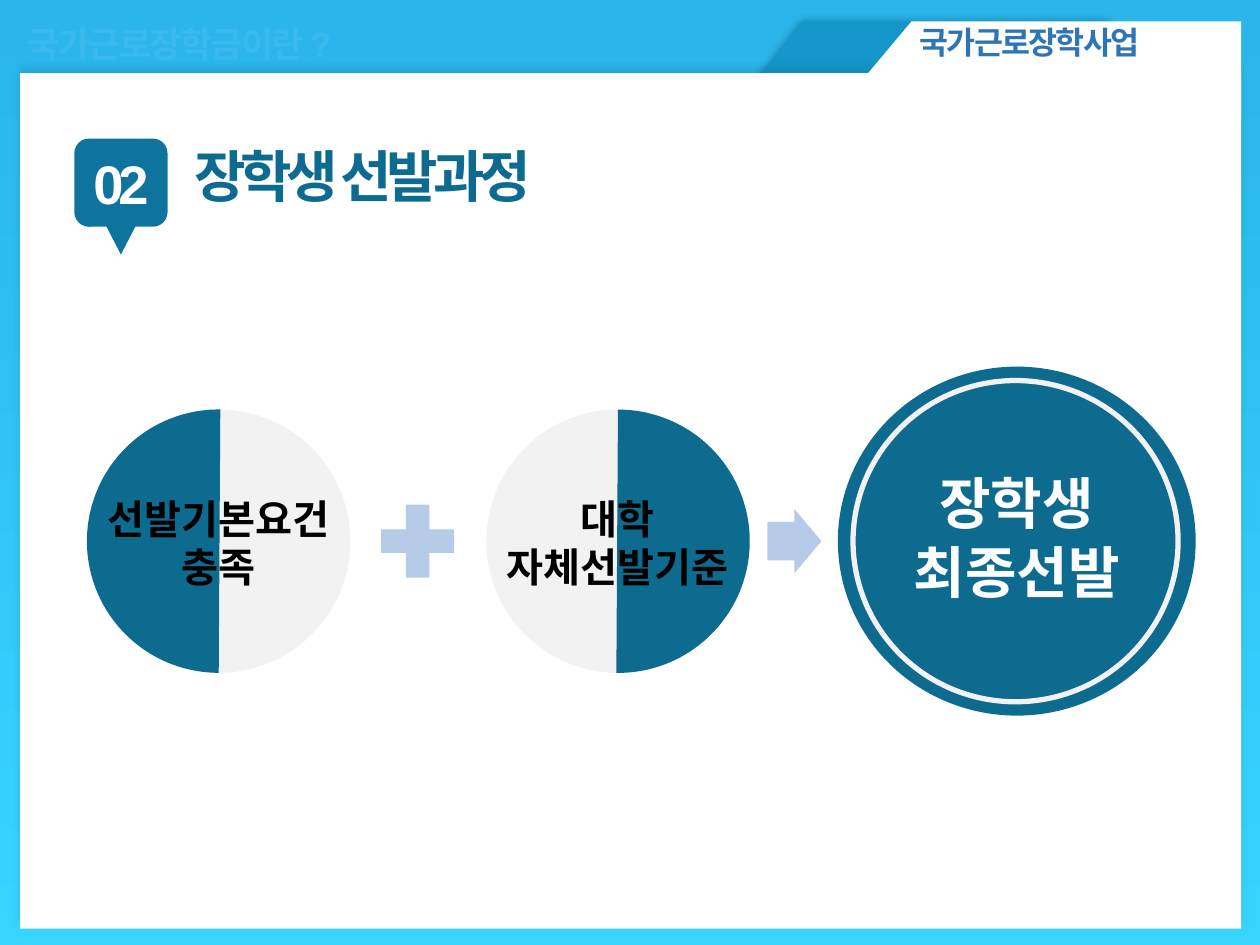
from lxml.etree import SubElement
from pptx import Presentation
from pptx.dml.color import RGBColor
from pptx.enum.shapes import MSO_SHAPE
from pptx.enum.text import MSO_ANCHOR, MSO_AUTO_SIZE, PP_ALIGN
from pptx.oxml.ns import qn
from pptx.util import Inches, Pt

TEAL, BADGE, PALE, SIGN = "0E6B90", "0F749D", "F2F2F2", "B5CBE7"
WHITE, SHADE = "FFFFFF", "0A4C66"


def color(value):
    return RGBColor.from_string(value)


def add_shape(page, kind, box, fill=None, line=None, width=0):
    shape = page.shapes.add_shape(kind, *map(Inches, box))
    shape.shadow.inherit = False
    if fill:
        shape.fill.solid()
        shape.fill.fore_color.rgb = color(fill)
    else:
        shape.fill.background()
    if line:
        shape.line.color.rgb = color(line)
        shape.line.width = Pt(width)
    else:
        shape.line.fill.background()
    return shape


def add_shadow(shape, alpha, blur, distance=0, angle=0):
    effects = shape.element.spPr.find(qn("a:effectLst"))
    shadow = SubElement(effects, qn("a:outerShdw"), blurRad=str(Pt(blur)),
                        dist=str(Pt(distance)), dir=str(angle * 60000),
                        algn="ctr", rotWithShape="0")
    tint = SubElement(shadow, qn("a:srgbClr"), val=SHADE)
    SubElement(tint, qn("a:alpha"), val=str(alpha * 1000))


def write(shape, text, size, ink, align=PP_ALIGN.CENTER, tracking=0):
    """Set bold Arial text; tracking is letter spacing in points."""
    frame = shape.text_frame
    frame.word_wrap = True
    frame.text = text
    for para in frame.paragraphs:
        para.alignment = align
        for span in para.runs:
            span.font.name = "Arial"
            span.font.size = Pt(size)
            span.font.bold = True
            span.font.color.rgb = color(ink)
            if tracking:
                span.font._element.set("spc", str(tracking * 100))
    return frame


def add_text(page, box, *args, **options):
    return write(page.shapes.add_textbox(*map(Inches, box)), *args, **options)


def add_tab(page, box, fill):
    """Draw a tab with a slanted left edge: a manual-input shape on its side."""
    left, top, width, height = box
    shift = (width - height) / 2
    tab = add_shape(page, MSO_SHAPE.FLOWCHART_MANUAL_INPUT,
                    (left + shift, top - shift, height, width), fill)
    tab.rotation = 90
    tab.element.spPr.find(qn("a:xfrm")).set("flipV", "1")
    return tab


def add_panel(page, box):
    left, top, width, height = box
    add_shadow(add_tab(page, (left + 5.6, top - 0.41, 3.03, 0.78), "1496CA"), 52, 5)
    panel = add_shape(page, MSO_SHAPE.RECTANGLE, box, WHITE)
    add_shadow(panel, 14, 4, 3, 270)
    add_tab(page, (left + width - 3.27, top - 0.41, 3.27, 0.78), WHITE)
    add_text(page, (left + 7.04, top - 0.45, 2.68, 0.4), "국가근로장학사업",
             18, "2E75B6", PP_ALIGN.LEFT, -1)
    add_text(page, (left - 0.04, top - 0.45, 5, 0.44), "국가근로장학금이란 ?",
             20, "3AB9EC", PP_ALIGN.LEFT, -1)


def add_heading(page, box, number, text):
    left, top, width, height = box
    badge = add_shape(page, MSO_SHAPE.FLOWCHART_ALTERNATE_PROCESS,
                      (left, top, 0.74, 0.7), BADGE)
    frame = write(badge, number, 31, WHITE, tracking=-3)
    frame.vertical_anchor = MSO_ANCHOR.MIDDLE
    frame.margin_left = frame.margin_right = Inches(0.04)
    add_shape(page, MSO_SHAPE.FLOWCHART_MERGE,
              (left + 0.22, top + 0.63, 0.3, 0.29), BADGE)
    title = page.shapes.title
    title.left, title.top = Inches(left + 0.85), Inches(top - 0.03)
    title.width, title.height = Inches(width - 0.85), Inches(0.64)
    frame = write(title, text, 32, TEAL, PP_ALIGN.LEFT, -3)
    frame.auto_size = MSO_AUTO_SIZE.NONE
    frame.vertical_anchor = MSO_ANCHOR.TOP
    # The placeholder starts at the back, so lift it above the panel.
    title.element.getparent().append(title.element)


def add_criterion(page, box, text, rotation=0):
    """Draw a half-and-half disc; rotation 180 puts the dark half on the right."""
    left, top, width, height = box
    add_shape(page, MSO_SHAPE.OVAL, box, PALE)
    half = add_shape(page, MSO_SHAPE.CHORD, box, TEAL)
    half.adjustments[0], half.adjustments[1] = 53.97, 162.44
    half.rotation = rotation
    add_text(page, (left - 0.02, top + 0.62, width + 0.04, 0.88),
             text, 23, "000000")


def add_result(page, box, text):
    left, top, width, height = box
    disc = add_shape(page, MSO_SHAPE.OVAL, box, TEAL)
    frame = write(disc, text, 32, WHITE)
    frame.vertical_anchor = MSO_ANCHOR.MIDDLE
    frame.margin_left = frame.margin_right = Inches(0.1)
    for para in frame.paragraphs:
        para.line_spacing = 0.9
        para.space_after = Pt(5)
    add_shape(page, MSO_SHAPE.OVAL,
              (left + 0.12, top + 0.11, width - 0.26, height - 0.22),
              line=PALE, width=3)


def add_process(page, box):
    left, top, width, height = box
    middle = top + height / 2

    def centred(offset, wide, tall):
        return left + offset, middle - tall / 2, wide, tall

    add_shape(page, MSO_SHAPE.MATH_PLUS, centred(2.23, 0.79, 0.79), SIGN)
    arrow = add_shape(page, MSO_SHAPE.RIGHT_ARROW, centred(5.4, 0.43, 0.51), SIGN)
    arrow.adjustments[0] = 0.6
    add_criterion(page, centred(0, 2.09, 2.09), "선발기본요건\n충족")
    add_criterion(page, centred(3.17, 2.09, 2.09), "대학\v자체선발기준", 180)
    add_result(page, centred(5.96, 2.84, height), "장학생\n최종선발")


def main():
    deck = Presentation()
    deck.slide_width, deck.slide_height = Inches(10), Inches(7.5)
    page = deck.slides.add_slide(deck.slide_layouts[5])
    fill = page.background.fill
    fill.gradient()
    fill.gradient_angle = 270
    for stop, value, position in zip(fill.gradient_stops, ("2BB5EB", "37D4FF"), (0, 1)):
        stop.color.rgb = color(value)
        stop.position = position
    add_panel(page, (0.16, 0.58, 9.69, 6.79))
    add_heading(page, (0.59, 1.1, 5.89, 0.92), "02", "장학생 선발과정")
    add_process(page, (0.69, 2.91, 8.8, 2.77))
    deck.save("out.pptx")


if __name__ == "__main__":
    main()
